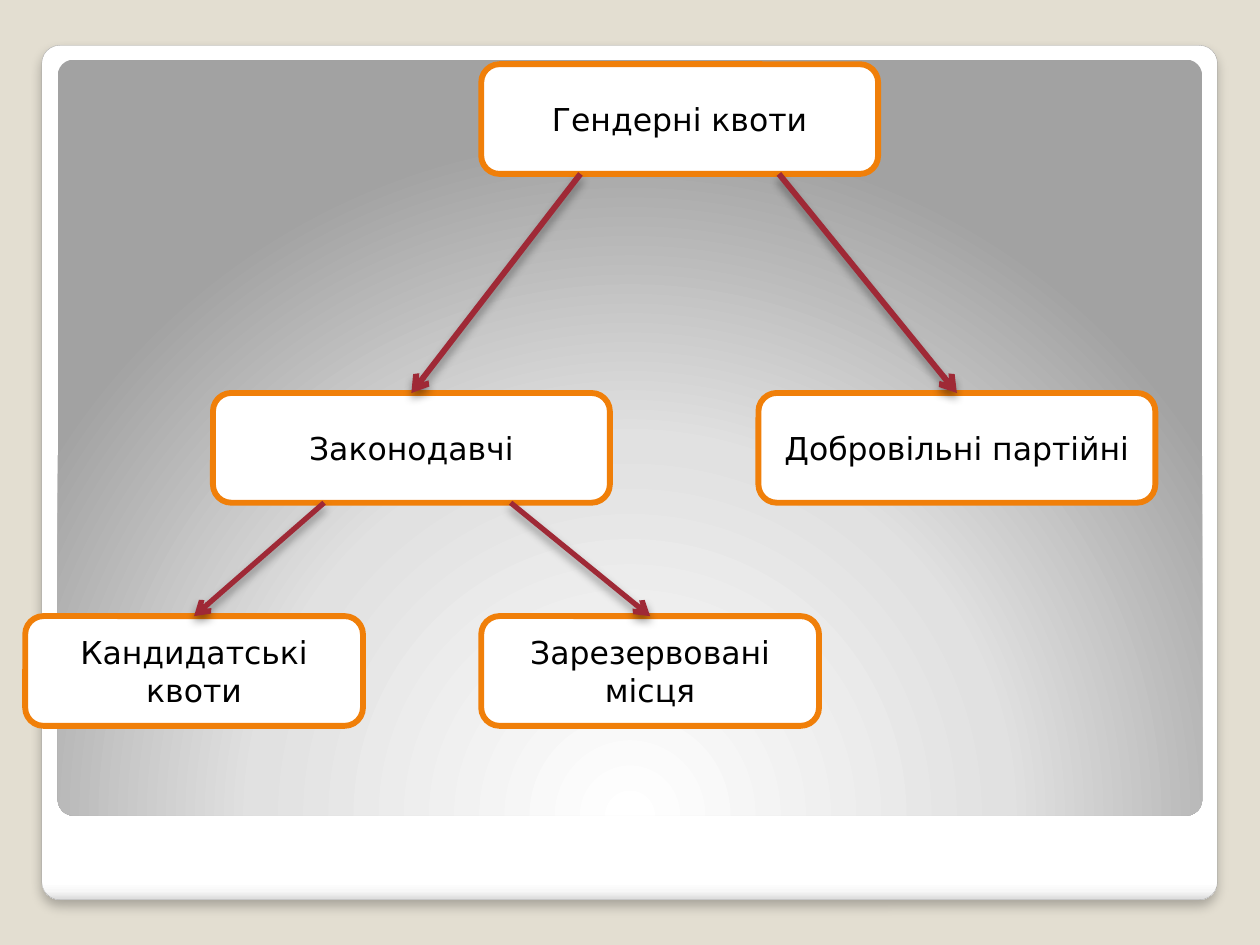
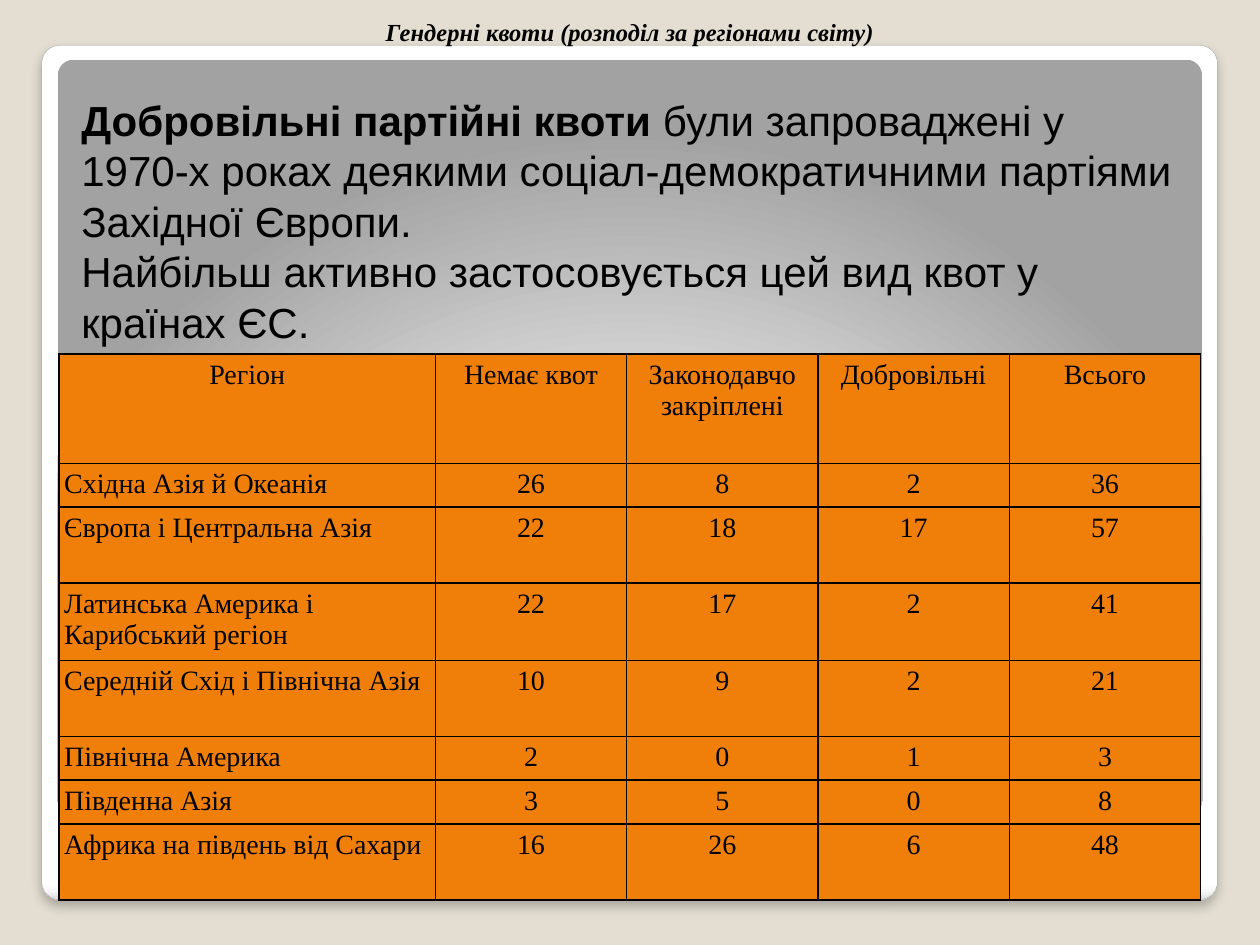
from lxml.etree import SubElement
from pptx import Presentation
from pptx.dml.color import RGBColor
from pptx.enum.shapes import MSO_CONNECTOR, MSO_SHAPE
from pptx.enum.text import MSO_ANCHOR, PP_ALIGN as Align
from pptx.oxml.ns import qn
from pptx.util import Pt

COLORS = {
    "background": "E3DED1",
    "white": "FFFFFF",
    "black": "000000",
    "orange": "F07F09",
    "red": "9F2936",
    "edge": "A4A4A4",
}
CARD_STOPS = [(0, "FFFFFF"), (98, "FFFFFF"), (99, "F7F7F7"), (100, "DADADA")]
PANEL_STOPS = [(0, "FFFFFF"), (55, "E1E1E1"), (100, "A2A2A2")]


def rgb(name):
    return RGBColor.from_string(COLORS[name])


def child(parent, tag, **attributes):
    return SubElement(parent, qn(tag), {key: str(value) for key, value in attributes.items()})


class Deck:
    """Holds the shared style and the slide being built."""

    def __init__(self):
        self.presentation = Presentation()
        self.presentation.slide_width = Pt(720)
        self.presentation.slide_height = Pt(540)
        self.slide = None

    def new_slide(self):
        self.slide = self.presentation.slides.add_slide(self.presentation.slide_layouts[6])
        fill = self.slide.background.fill
        fill.solid()
        fill.fore_color.rgb = rgb("background")

        # White card with a soft shadow
        card = self.rounded(23.9, 25.9, 671.8, 488.2, 0.021, "edge", 0.16)
        gradient = self.gradient(card, CARD_STOPS)
        child(gradient, "a:lin", ang=90 * 60000, scaled=0)
        self.shadow(card, alpha=25, blur=6, distance=4)

        # Grey panel lit from below
        panel = self.rounded(33, 34.1, 654, 432, 0.021)
        gradient = self.gradient(panel, PANEL_STOPS)
        circle = child(gradient, "a:path", path="circle")
        child(circle, "a:fillToRect", l=50000, t=175000, r=50000, b=-75000)

    def rounded(self, left, top, width, height, radius=None, line=None, line_width=0):
        shape = self.slide.shapes.add_shape(
            MSO_SHAPE.ROUNDED_RECTANGLE, Pt(left), Pt(top), Pt(width), Pt(height))
        shape.shadow.inherit = False
        if radius is not None:
            shape.adjustments[0] = radius
        if line:
            shape.line.color.rgb = rgb(line)
            shape.line.width = Pt(line_width)
        else:
            shape.line.fill.background()
        return shape

    def gradient(self, shape, stops):
        properties = shape.element.spPr
        gradient = child(properties, "a:gradFill", rotWithShape=1)
        properties.find(qn("a:prstGeom")).addnext(gradient)
        stop_list = child(gradient, "a:gsLst")
        for position, color in stops:
            stop = child(stop_list, "a:gs", pos=position * 1000)
            child(stop, "a:srgbClr", val=color)
        return gradient

    def shadow(self, shape, alpha, blur, distance):
        properties = shape.element.spPr
        effects = properties.find(qn("a:effectLst"))
        if effects is None:
            effects = child(properties, "a:effectLst")
        outer = child(effects, "a:outerShdw", blurRad=Pt(blur), dist=Pt(distance),
                      dir=90 * 60000, algn="ctr", rotWithShape=0)
        color = child(outer, "a:srgbClr", val=COLORS["black"])
        child(color, "a:alpha", val=alpha * 1000)

    def style(self, paragraph, font_name, size, align=Align.LEFT, bold=None, italic=None):
        paragraph.alignment = align
        font = paragraph.font
        font.name, font.size = font_name, Pt(size)
        font.bold, font.italic = bold, italic
        font.color.rgb = rgb("black")

    def node(self, text, left, top, width):
        shape = self.rounded(left, top, width, 62.7, line="orange", line_width=3.35)
        shape.fill.solid()
        shape.fill.fore_color.rgb = rgb("white")
        frame = shape.text_frame
        frame.word_wrap = True
        frame.vertical_anchor = MSO_ANCHOR.MIDDLE
        frame.text = text
        self.style(frame.paragraphs[0], "DejaVu Sans", 18, Align.CENTER)
        return shape

    def arrow(self, parent, share, target, width):
        """Runs from a share of the parent's bottom edge to the target's top centre."""
        connector = self.slide.shapes.add_connector(
            MSO_CONNECTOR.STRAIGHT,
            int(parent.left + share * parent.width), parent.top + parent.height,
            target.left + target.width // 2, target.top)
        connector.line.color.rgb = rgb("red")
        connector.line.width = Pt(width)
        child(connector.element.spPr.find(qn("a:ln")), "a:tailEnd", type="arrow")
        self.shadow(connector, alpha=40, blur=5.2, distance=3)

    def text(self, paragraphs, left, top, width, height, wrap=True,
             anchor=MSO_ANCHOR.TOP, **style):
        """Each paragraph is a list of (text, bold) runs."""
        box = self.slide.shapes.add_textbox(Pt(left), Pt(top), Pt(width), Pt(height))
        frame = box.text_frame
        frame.word_wrap = wrap
        frame.vertical_anchor = anchor
        for index, runs in enumerate(paragraphs):
            paragraph = frame.add_paragraph() if index else frame.paragraphs[0]
            self.style(paragraph, **style)
            for content, bold in runs:
                run = paragraph.add_run()
                run.text = content
                run.font.bold = bold

    def table(self, rows, left, top, widths, heights):
        frame = self.slide.shapes.add_table(
            len(rows), len(widths), Pt(left), Pt(top), Pt(sum(widths)), Pt(sum(heights)))
        table = frame.table
        table.first_row = table.horz_banding = False
        for column, width in zip(table.columns, widths):
            column.width = Pt(width)
        for row, height in zip(table.rows, heights):
            row.height = Pt(height)
        for row_index, values in enumerate(rows):
            for column_index, value in enumerate(values):
                is_region = row_index > 0 and column_index == 0
                self.cell(table.cell(row_index, column_index), value,
                          Align.LEFT if is_region else Align.CENTER)

    def cell(self, cell, value, align):
        cell.text = str(value)
        self.style(cell.text_frame.paragraphs[0], "Times New Roman", 16, align)
        cell.margin_left = cell.margin_right = Pt(2.9)
        cell.margin_top = cell.margin_bottom = Pt(2.9)
        properties = cell._tc.get_or_add_tcPr()
        for side in "LRTB":
            border = child(properties, f"a:ln{side}", w=Pt(1))
            child(child(border, "a:solidFill"), "a:srgbClr", val=COLORS["black"])
        cell.fill.solid()
        cell.fill.fore_color.rgb = rgb("orange")


def quota_tree(deck):
    deck.new_slide()

    # Three levels of boxes
    wide, narrow = 226.8, 193
    quotas = deck.node("Гендерні квоти", 275, 36.7, wide)
    legislative = deck.node("Законодавчі", 121.7, 224.6, wide)
    voluntary = deck.node("Добровільні партійні", 433.4, 224.6, wide)
    candidate = deck.node("Кандидатські квоти", 14.4, 352.1, narrow)
    reserved = deck.node("Зарезервовані місця", 275, 352.1, narrow)

    # Links from level to level
    deck.arrow(quotas, 0.25, legislative, 3.35)
    deck.arrow(quotas, 0.75, voluntary, 3.35)
    deck.arrow(legislative, 0.28, candidate, 3)
    deck.arrow(legislative, 0.75, reserved, 3)


def quota_regions(deck):
    deck.new_slide()

    # Introduction
    deck.text([
        [("Добровільні партійні квоти ", True),
         ("були запроваджені у 1970-х роках деякими соціал-демократичними "
          "партіями Західної Європи.", False)],
        [("Найбільш активно застосовується цей вид квот у країнах ЄС.", False)],
    ], 39.4, 50.4, 641.8, 152.6, font_name="Arial", size=24)

    # Countries by region and kind of quota
    tall, middle, low = 62.4, 43.45, 24.6
    deck.table([
        ("Регіон", "Немає квот", "Законодавчо закріплені", "Добровільні", "Всього"),
        ("Східна Азія й Океанія", 26, 8, 2, 36),
        ("Європа і Центральна Азія", 22, 18, 17, 57),
        ("Латинська Америка і Карибський регіон", 22, 17, 2, 41),
        ("Середній Схід і Північна Азія", 10, 9, 2, 21),
        ("Північна Америка", 2, 0, 1, 3),
        ("Південна Азія", 3, 5, 0, 8),
        ("Африка на південь від Сахари", 16, 26, 6, 48),
    ], 33.8, 202.4, [215] + [109.35] * 4,
        [tall, low, middle, middle, middle, low, low, middle])

    # Heading
    deck.text([[("Гендерні квоти (розподіл за регіонами світу)", True)]],
              0, 0, 720, 36, wrap=False, anchor=MSO_ANCHOR.MIDDLE,
              font_name="Times New Roman", size=14, align=Align.CENTER,
              bold=True, italic=True)


def main():
    deck = Deck()
    quota_tree(deck)
    quota_regions(deck)
    deck.presentation.save("out.pptx")


if __name__ == "__main__":
    main()
